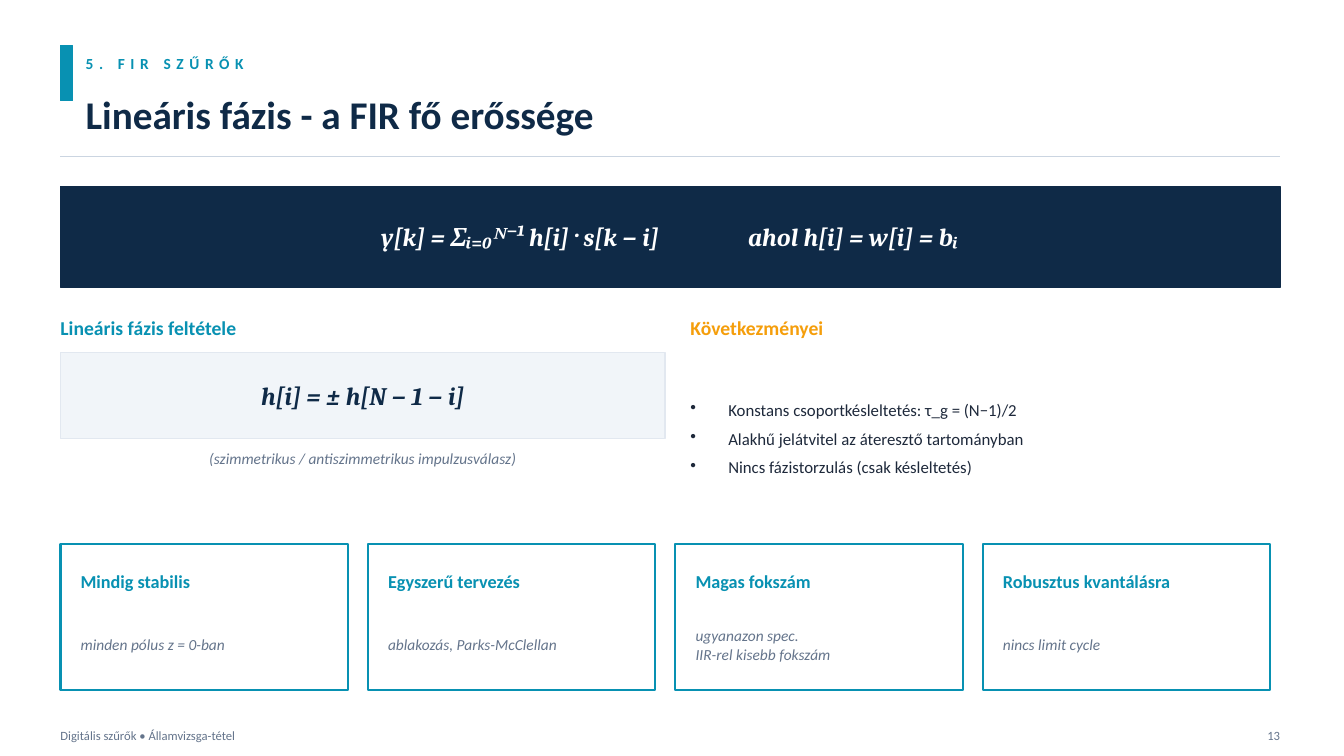
"""Build the slide about the linear phase of FIR filters."""
from lxml import etree
from pptx import Presentation
from pptx import util as u
from pptx.dml.color import RGBColor
from pptx.enum import shapes, text
from pptx.oxml.ns import qn

TEAL = RGBColor(0x08, 0x91, 0xB2)
NAVY = RGBColor(0x0F, 0x2A, 0x47)
AMBER = RGBColor(0xF5, 0x9E, 0x0B)
SLATE = RGBColor(0x64, 0x74, 0x8B)
INK = RGBColor(0x1E, 0x29, 0x3B)
RULE = RGBColor(0xCB, 0xD5, 0xE1)
PALE = RGBColor(0xF1, 0xF5, 0xF9)
PALE_EDGE = RGBColor(0xE2, 0xE8, 0xF0)
WHITE = RGBColor(0xFF, 0xFF, 0xFF)

LEFT = text.PP_ALIGN.LEFT
CENTER = text.PP_ALIGN.CENTER
RIGHT = text.PP_ALIGN.RIGHT

MARGIN = 43.2
CONTENT_WIDTH = 871.2
COLUMN_WIDTH = 432
RIGHT_COLUMN = 493.2

presentation = Presentation()
presentation.slide_width = u.Pt(960)
presentation.slide_height = u.Pt(540)
slide = presentation.slides.add_slide(presentation.slide_layouts[6])


def add_panel(left, top, width, height, fill, line, line_width=1):
    shape = slide.shapes.add_shape(
        shapes.MSO_SHAPE.RECTANGLE, u.Pt(left), u.Pt(top), u.Pt(width), u.Pt(height))
    shape.shadow.inherit = False
    shape.fill.solid()
    shape.fill.fore_color.rgb = fill
    shape.line.color.rgb = line
    shape.line.width = u.Pt(line_width)


def add_label(left, top, width, height, lines, size, color,
              bold=False, italic=False, align=LEFT, font="Calibri"):
    box = slide.shapes.add_textbox(u.Pt(left), u.Pt(top), u.Pt(width), u.Pt(height))
    frame = box.text_frame
    frame.word_wrap = True
    frame.vertical_anchor = text.MSO_ANCHOR.MIDDLE
    frame.margin_left = frame.margin_right = frame.margin_top = frame.margin_bottom = 0
    for index, line in enumerate(lines):
        paragraph = frame.add_paragraph() if index else frame.paragraphs[0]
        paragraph.alignment = align
        run = paragraph.add_run()
        run.text = line
        run.font.name = font
        run.font.size = u.Pt(size)
        run.font.bold = bold
        run.font.italic = italic
        run.font.color.rgb = color
    return frame


add_panel(MARGIN, 32.4, 8.64, 39.6, TEAL, TEAL)
section = add_label(61.2, 32.4, 576, 25.2, ["5. FIR SZŰRŐK"], 11, TEAL, bold=True)
section.paragraphs[0].runs[0].font._element.set("spc", "400")
add_label(61.2, 56.16, 864, 50.4, ["Lineáris fázis - a FIR fő erőssége"], 28, NAVY, bold=True)

rule = slide.shapes.add_connector(
    shapes.MSO_CONNECTOR.STRAIGHT, u.Pt(MARGIN), u.Pt(111.6),
    u.Pt(MARGIN + CONTENT_WIDTH), u.Pt(111.6))
rule.line.color.rgb = RULE
rule.line.width = u.Pt(0.75)
etree.SubElement(rule._element.spPr, qn("a:effectLst"))

add_panel(MARGIN, 133.2, CONTENT_WIDTH, 72, NAVY, NAVY)
add_label(MARGIN, 133.2, 427.5, 72, ["y[k] = Σᵢ₌₀ᴺ⁻¹ h[i] · s[k − i]"], 18, WHITE,
          bold=True, italic=True, align=RIGHT, font="Cambria")
add_label(534.3, 133.2, 380.1, 72, ["ahol h[i] = w[i] = bᵢ"], 18, WHITE,
          bold=True, italic=True, font="Cambria")

add_label(MARGIN, 219.6, COLUMN_WIDTH, 28.8, ["Lineáris fázis feltétele"], 14, TEAL, bold=True)
add_panel(MARGIN, 252, COLUMN_WIDTH, 61.2, PALE, PALE_EDGE)
add_label(MARGIN, 252, COLUMN_WIDTH, 61.2, ["h[i] = ± h[N − 1 − i]"], 18, NAVY,
          bold=True, italic=True, align=CENTER, font="Cambria")
add_label(MARGIN, 316.8, COLUMN_WIDTH, 21.6,
          ["(szimmetrikus / antiszimmetrikus impulzusválasz)"], 11, SLATE,
          italic=True, align=CENTER)

add_label(RIGHT_COLUMN, 219.6, COLUMN_WIDTH, 28.8, ["Következményei"], 14, AMBER, bold=True)
consequences = add_label(RIGHT_COLUMN, 252, COLUMN_WIDTH, 122.4, [
    "Konstans csoportkésleltetés: τ_g = (N−1)/2",
    "Alakhű jelátvitel az áteresztő tartományban",
    "Nincs fázistorzulás (csak késleltetés)",
], 12, INK)
for paragraph in consequences.paragraphs:
    paragraph.space_after = u.Pt(6)
    properties = paragraph._p.get_or_add_pPr()
    properties.set("marL", str(u.Pt(27)))
    properties.set("indent", str(u.Pt(-27)))
    etree.SubElement(properties, qn("a:buChar")).set("char", "•")

cards = [
    ("Mindig stabilis", ["minden pólus z = 0-ban"]),
    ("Egyszerű tervezés", ["ablakozás, Parks-McClellan"]),
    ("Magas fokszám", ["ugyanazon spec.", "IIR-rel kisebb fokszám"]),
    ("Robusztus kvantálásra", ["nincs limit cycle"]),
]
for index, (heading, details) in enumerate(cards):
    card_left = MARGIN + index * 219.6
    add_panel(card_left, 388.8, 205.2, 104.4, WHITE, TEAL, 1.5)
    add_label(card_left + 14.4, 397.44, 183.6, 36, [heading], 13, TEAL, bold=True)
    add_label(card_left + 14.4, 433.44, 183.6, 54, details, 11, SLATE, italic=True)

add_label(MARGIN, 514.8, 576, 21.6, ["Digitális szűrők • Államvizsga-tétel"], 9, SLATE)
add_label(892.8, 514.8, 21.6, 21.6, ["13"], 9, SLATE, align=RIGHT)

presentation.save("out.pptx")
